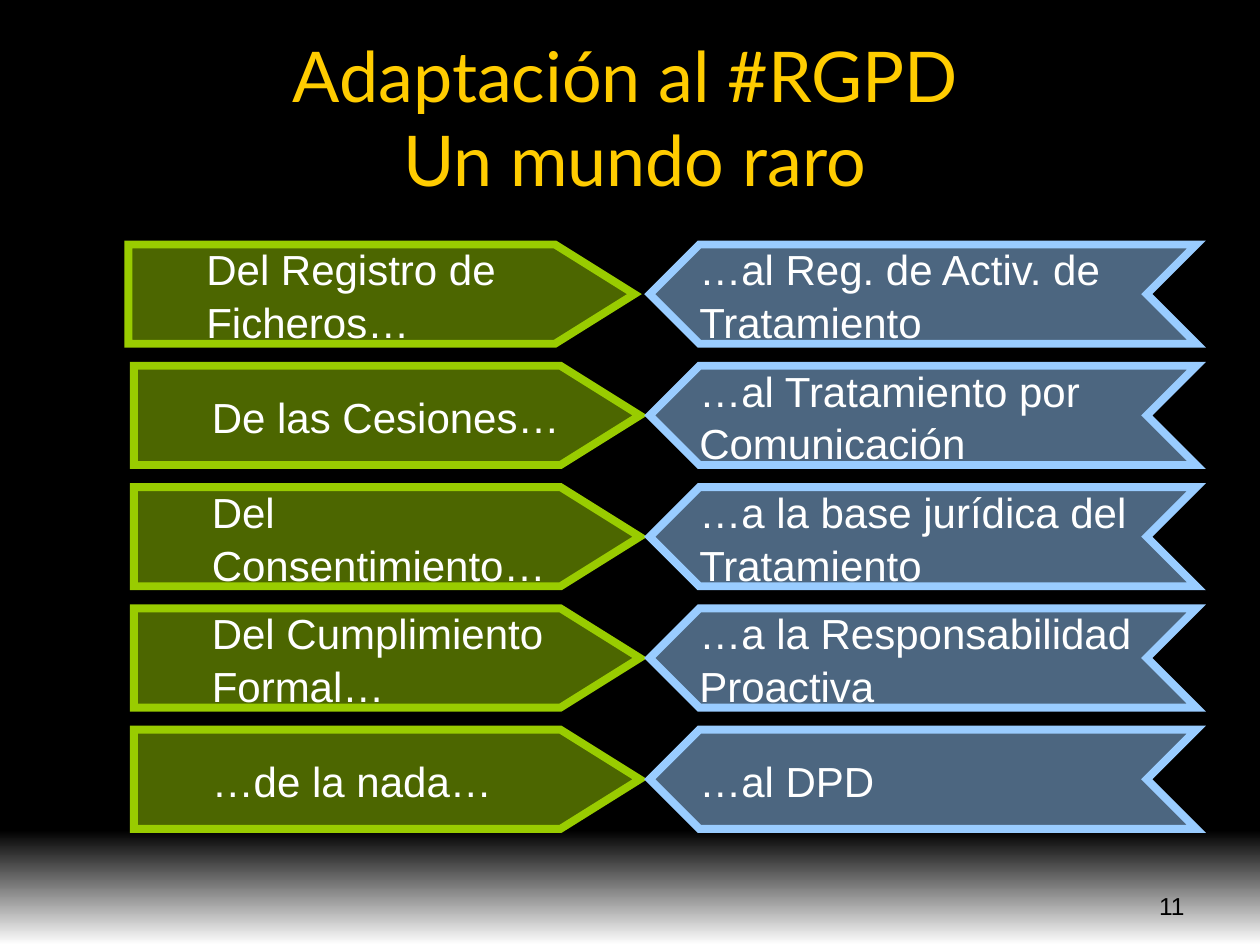
from lxml import etree
from pptx import Presentation
from pptx import util as u
from pptx.dml.color import RGBColor
from pptx.enum import shapes, text
from pptx.oxml.ns import qn

COLORS = {"black": "000000", "white": "FFFFFF", "gold": "FFCC00",
          "green": "99CC00", "blue": "99CCFF"}
ROWS = [
    ("Del Registro de Ficheros…", "…al Reg. de Activ. de Tratamiento"),
    ("De las Cesiones…", "…al Tratamiento por Comunicación"),
    ("Del Consentimiento…", "…a la base jurídica del Tratamiento"),
    ("Del Cumplimiento Formal…", "…a la Responsabilidad Proactiva"),
    ("…de la nada…", "…al DPD"),
]
TOP, PITCH, HEIGHT = 4.93, 2.445, 2.0


def rgb(name):
    return RGBColor.from_string(COLORS[name])


class Deck:
    """Style of the deck and the slide being built."""
    font, title_font = "Arial", "Lato"

    def __init__(self):
        self.prs = Presentation()
        self.prs.slide_width, self.prs.slide_height = u.Cm(25.4), u.Cm(19.05)
        self.s = self.prs.slides.add_slide(self.prs.slide_layouts[5])
        fill = self.s.background.fill
        fill.solid()
        fill.fore_color.rgb = rgb("black")

    def run(self, p, words, size, color, font=None):
        r = p.add_run()
        r.text = words
        r.font.size = u.Pt(size)
        r.font.name = font or self.font
        r.font.color.rgb = rgb(color)

    def shape(self, kind, x, y, w, h):
        sp = self.s.shapes.add_shape(kind, u.Cm(x), u.Cm(y), u.Cm(w), u.Cm(h))
        sp.shadow.inherit = False
        return sp

    def title(self, lines, x, y, w, h):
        sp = self.s.shapes.title
        sp.left, sp.top, sp.width, sp.height = map(u.Cm, (x, y, w, h))
        tf = sp.text_frame
        tf.auto_size = text.MSO_AUTO_SIZE.NONE
        tf.vertical_anchor = text.MSO_ANCHOR.MIDDLE
        p = tf.paragraphs[0]
        p.alignment = text.PP_ALIGN.CENTER
        for i, line in enumerate(lines):
            if i:
                p.add_line_break()
            self.run(p, line, 40, "gold", self.title_font)

    def fade(self, x, y, w, h):
        """Band running from black at the top to white at the bottom."""
        sp = self.shape(shapes.MSO_SHAPE.RECTANGLE, x, y, w, h)
        sp.line.fill.background()
        sp.fill.gradient()
        sp.fill.gradient_angle = 270
        for stop, pos, name in zip(sp.fill.gradient_stops, (0, 1), ("black", "white")):
            stop.position = pos
            stop.color.rgb = rgb(name)

    def arrow(self, kind, words, color, x, y, w, indent=0):
        """Half-transparent arrow with a thick, sharp-cornered outline."""
        sp = self.shape(kind, x, y, w, HEIGHT)
        sp.fill.solid()
        sp.fill.fore_color.rgb = rgb(color)
        clr = sp.fill._xPr.find(qn("a:solidFill"))[0]
        etree.SubElement(clr, qn("a:alpha"), val="50000")
        sp.line.color.rgb = rgb(color)
        sp.line.width = u.Pt(4.5)
        etree.SubElement(sp.line._get_or_add_ln(), qn("a:miter"), lim="800000")
        tf = sp.text_frame
        tf.word_wrap = True
        tf.vertical_anchor = text.MSO_ANCHOR.MIDDLE
        tf.margin_left = tf.margin_right = tf.margin_top = tf.margin_bottom = 0
        p = tf.paragraphs[0]
        p.alignment = text.PP_ALIGN.LEFT
        p.line_spacing = 1.05
        if indent:
            p.level = 1
            p._p.get_or_add_pPr().set("marL", str(u.Cm(indent)))
            p._p.get_or_add_pPr().set("indent", "0")
        self.run(p, words, 24, "white")
        return sp

    def page_number(self, number, x, y, w, h):
        sp = self.s.shapes.add_textbox(u.Cm(x), u.Cm(y), u.Cm(w), u.Cm(h))
        tf = sp.text_frame
        tf.word_wrap = True
        tf.vertical_anchor = text.MSO_ANCHOR.MIDDLE
        p = tf.paragraphs[0]
        p.alignment = text.PP_ALIGN.RIGHT
        self.run(p, number, 14, "black")


def main():
    deck = Deck()
    deck.fade(0, 16.74, 25.4, 2.31)
    deck.title(["Adaptación al #RGPD ", "Un mundo raro"], 0.69, 0.76, 24.2, 3.18)
    deck.page_number("11", 22.5, 17.6, 1.63, 1.32)
    for i, (before, after) in enumerate(ROWS):
        y = TOP + i * PITCH
        left = 2.7 if i else 2.59
        plate = deck.arrow(shapes.MSO_SHAPE.PENTAGON, before, "green", left, y, 10.2, 1.57)
        plate.adjustments[0] = 0.8
        chevron = deck.arrow(shapes.MSO_SHAPE.CHEVRON, after, "blue", 13.1, y, 11.02)
        chevron._element.spPr.find(qn("a:xfrm")).set("flipH", "1")
    deck.prs.save("out.pptx")


if __name__ == "__main__":
    main()
